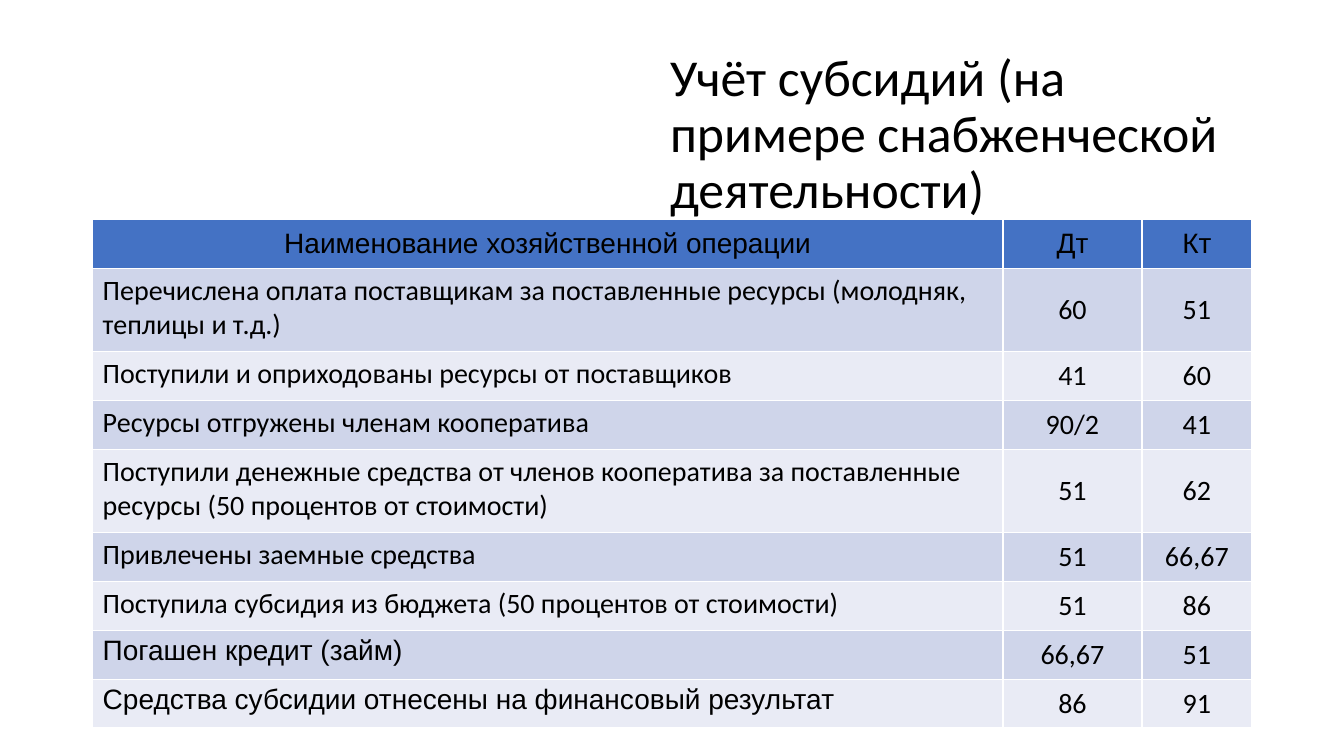
from pptx import Presentation
from pptx.dml.color import RGBColor
from pptx.enum.text import MSO_ANCHOR as Anchor, PP_ALIGN as Align
from pptx.oxml.ns import qn
from pptx.util import Pt
from lxml.etree import SubElement

BLACK = RGBColor(0x00, 0x00, 0x00)
WHITE = RGBColor(0xFF, 0xFF, 0xFF)
HEADER_BLUE = RGBColor(0x44, 0x72, 0xC4)
BAND_DARK = RGBColor(0xCF, 0xD5, 0xEA)
BAND_LIGHT = RGBColor(0xE9, 0xEB, 0xF5)

HEADINGS = ("Наименование хозяйственной операции", "Дт", "Кт")
OPERATIONS = [
    ("Перечислена оплата поставщикам за поставленные ресурсы (молодняк, теплицы и т.д.)", "60", "51"),
    ("Поступили и оприходованы ресурсы от поставщиков", "41", "60"),
    ("Ресурсы отгружены членам кооператива", "90/2", "41"),
    ("Поступили денежные средства от членов кооператива за поставленные "
     "ресурсы (50 процентов от стоимости)", "51", "62"),
    ("Привлечены заемные средства", "51", "66,67"),
    ("Поступила субсидия из бюджета (50 процентов от стоимости)", "51", "86"),
    ("Погашен кредит (займ)", "66,67", "51"),
    ("Средства субсидии отнесены на финансовый результат", "86", "91"),
]
COLUMN_WIDTHS = (650.2, 99.4, 78.4)
ROW_HEIGHT = 34.9
TALL_ROW_HEIGHT = 59.4
TALL_ROWS = (1, 4)
ARIAL_ROWS = (0, 7, 8)


def write(frame, text, size=20, font="Calibri", color=BLACK, align=Align.LEFT, spacing=1.0):
    paragraph = frame.paragraphs[0]
    paragraph.alignment = align
    paragraph.line_spacing = spacing
    run = paragraph.add_run()
    run.text = text
    run.font.size = Pt(size)
    run.font.name = font
    run.font.color.rgb = color


class SlideBuilder:
    def __init__(self, slide, border_color=WHITE, border_width=1):
        self.slide = slide
        self.border_color = border_color
        self.border_width = border_width

    def title(self, text, left, top, width, height):
        heading = self.slide.shapes.add_textbox(Pt(left), Pt(top), Pt(width), Pt(height))
        frame = heading.text_frame
        frame.word_wrap = True
        frame.vertical_anchor = Anchor.MIDDLE
        write(frame, text, size=37, spacing=0.9)

    def border(self, cell):
        properties = cell._tc.get_or_add_tcPr()
        for side in ("a:lnL", "a:lnR", "a:lnT", "a:lnB"):
            line = SubElement(properties, qn(side), w=str(Pt(self.border_width)))
            fill = SubElement(line, qn("a:solidFill"))
            SubElement(fill, qn("a:srgbClr"), val=str(self.border_color))

    def cell(self, cell, text, fill, font, centered):
        self.border(cell)
        cell.fill.solid()
        cell.fill.fore_color.rgb = fill
        cell.vertical_anchor = Anchor.MIDDLE if centered else Anchor.TOP
        write(cell.text_frame, text, font=font, align=Align.CENTER if centered else Align.LEFT)

    def table(self, records, left, top):
        heights = [TALL_ROW_HEIGHT if row in TALL_ROWS else ROW_HEIGHT for row in range(len(records))]
        ledger = self.slide.shapes.add_table(
            len(records), len(COLUMN_WIDTHS), Pt(left), Pt(top),
            Pt(sum(COLUMN_WIDTHS)), Pt(sum(heights))).table
        for column, width in zip(ledger.columns, COLUMN_WIDTHS):
            column.width = Pt(width)
        for row, (record, height) in enumerate(zip(records, heights)):
            ledger.rows[row].height = Pt(height)
            is_header = row == 0
            fill = HEADER_BLUE if is_header else BAND_DARK if row % 2 else BAND_LIGHT
            for column, text in enumerate(record):
                is_arial = is_header or (column == 0 and row in ARIAL_ROWS)
                self.cell(ledger.cell(row, column), text, fill,
                          font="Arial" if is_arial else "Calibri",
                          centered=is_header or column > 0)


def main():
    deck = Presentation()
    deck.slide_width, deck.slide_height = Pt(960), Pt(540)
    builder = SlideBuilder(deck.slides.add_slide(deck.slide_layouts[6]))
    builder.title("Учёт субсидий (на примере снабженческой деятельности)", 471.6, 22.3, 421.9, 149)
    builder.table([HEADINGS, *OPERATIONS], 66.2, 157)
    deck.save("out.pptx")


if __name__ == "__main__":
    main()
